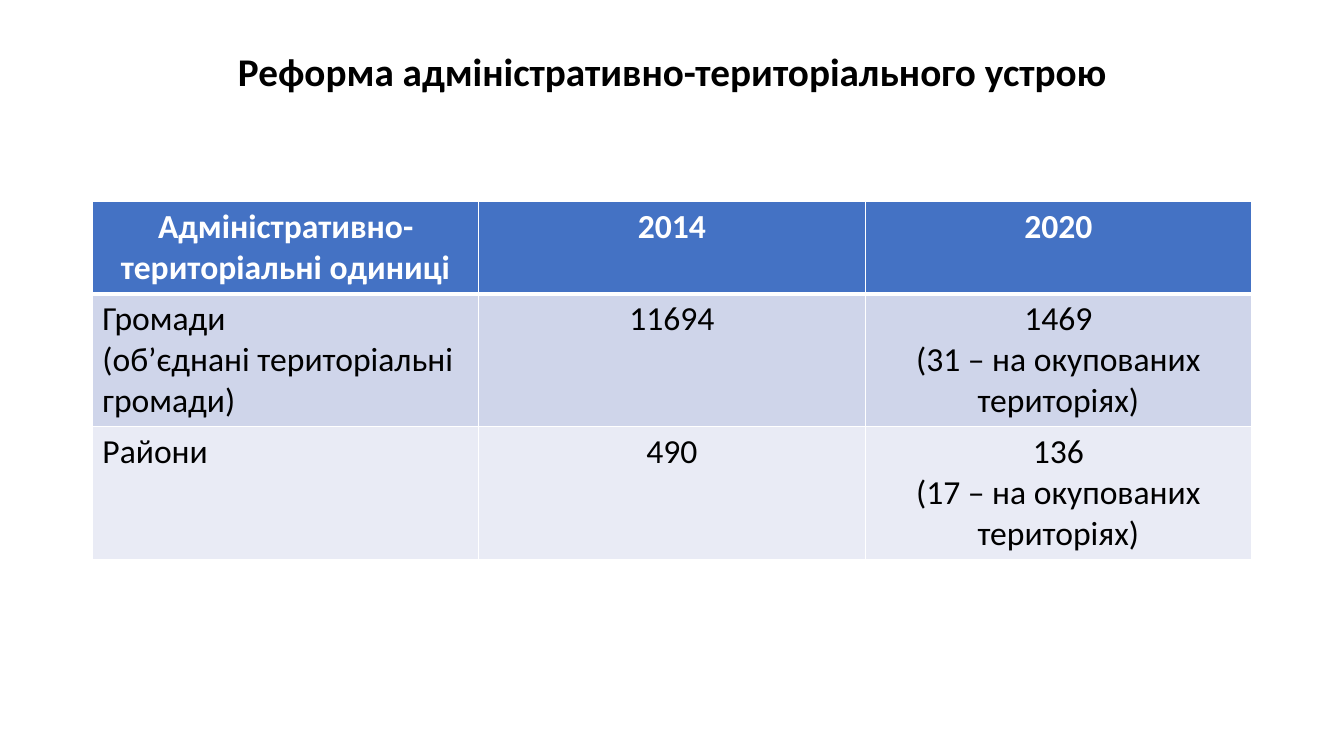
from lxml import etree
from pptx import Presentation
from pptx.dml.color import RGBColor
from pptx.enum.text import MSO_ANCHOR, MSO_AUTO_SIZE, PP_ALIGN
from pptx.oxml.ns import qn
from pptx.util import Pt

CENTER, LEFT = PP_ALIGN.CENTER, PP_ALIGN.LEFT
MIDDLE = MSO_ANCHOR.MIDDLE
NO_AUTOFIT = MSO_AUTO_SIZE.NONE
TITLE_ONLY = 5
FONT = "Calibri"
COLORS = {
    "text": "000000",
    "white": "FFFFFF",
    "header": "4472C4",
    "odd": "CFD5EA",
    "even": "E9EBF5",
}
MARGIN, CONTENT_WIDTH = 66, 828
ROW_HEIGHTS = [65, 95, 95]
UNITS = [
    ["Адміністративно-територіальні одиниці", "2014", "2020"],
    ["Громади\n(об’єднані територіальні громади)", "11694",
     "1469\n(31 – на окупованих територіях)"],
    ["Райони", "490", "136\n(17 – на окупованих територіях)"],
]


def color(name):
    return RGBColor.from_string(COLORS[name])


def write(frame, text, size, color_name, bold, align):
    frame.text = text
    for paragraph in frame.paragraphs:
        paragraph.alignment = align
        for run in paragraph.runs:
            run.font.name = FONT
            run.font.size = Pt(size)
            run.font.bold = bold
            run.font.color.rgb = color(color_name)


def add_title(slide, text):
    title = slide.shapes.title
    title.left, title.top = Pt(MARGIN), Pt(29)
    title.width, title.height = Pt(CONTENT_WIDTH), Pt(47.5)
    frame = title.text_frame
    frame.word_wrap = True
    frame.auto_size = NO_AUTOFIT
    frame.vertical_anchor = MIDDLE
    write(frame, text, 28, "text", True, CENTER)
    frame.paragraphs[0].line_spacing = 0.9


def set_borders(cell, widths):
    properties = cell._tc.get_or_add_tcPr()
    for side, width in widths.items():
        line = etree.SubElement(properties, qn(f"a:ln{side}"), w=str(Pt(width)))
        fill = etree.SubElement(line, qn("a:solidFill"))
        etree.SubElement(fill, qn("a:srgbClr"), val=COLORS["white"])


def add_units_table(slide, rows):
    table = slide.shapes.add_table(
        len(rows), len(rows[0]), Pt(MARGIN), Pt(144),
        Pt(CONTENT_WIDTH), Pt(sum(ROW_HEIGHTS))).table
    for row, height in zip(table.rows, ROW_HEIGHTS):
        row.height = Pt(height)
    for r, texts in enumerate(rows):
        header = r == 0
        band = "header" if header else "odd" if r % 2 else "even"
        for c, text in enumerate(texts):
            cell = table.cell(r, c)
            write(cell.text_frame, text, 24, "white" if header else "text",
                  header, CENTER if header or c else LEFT)
            set_borders(cell, {"L": 1, "R": 1, "T": 3 if r == 1 else 1,
                               "B": 3 if header else 1})
            cell.fill.solid()
            cell.fill.fore_color.rgb = color(band)


def main():
    presentation = Presentation()
    presentation.slide_width, presentation.slide_height = Pt(960), Pt(540)
    slide = presentation.slides.add_slide(presentation.slide_layouts[TITLE_ONLY])
    add_title(slide, "Реформа адміністративно-територіального устрою")
    add_units_table(slide, UNITS)
    presentation.save("out.pptx")


if __name__ == "__main__":
    main()
